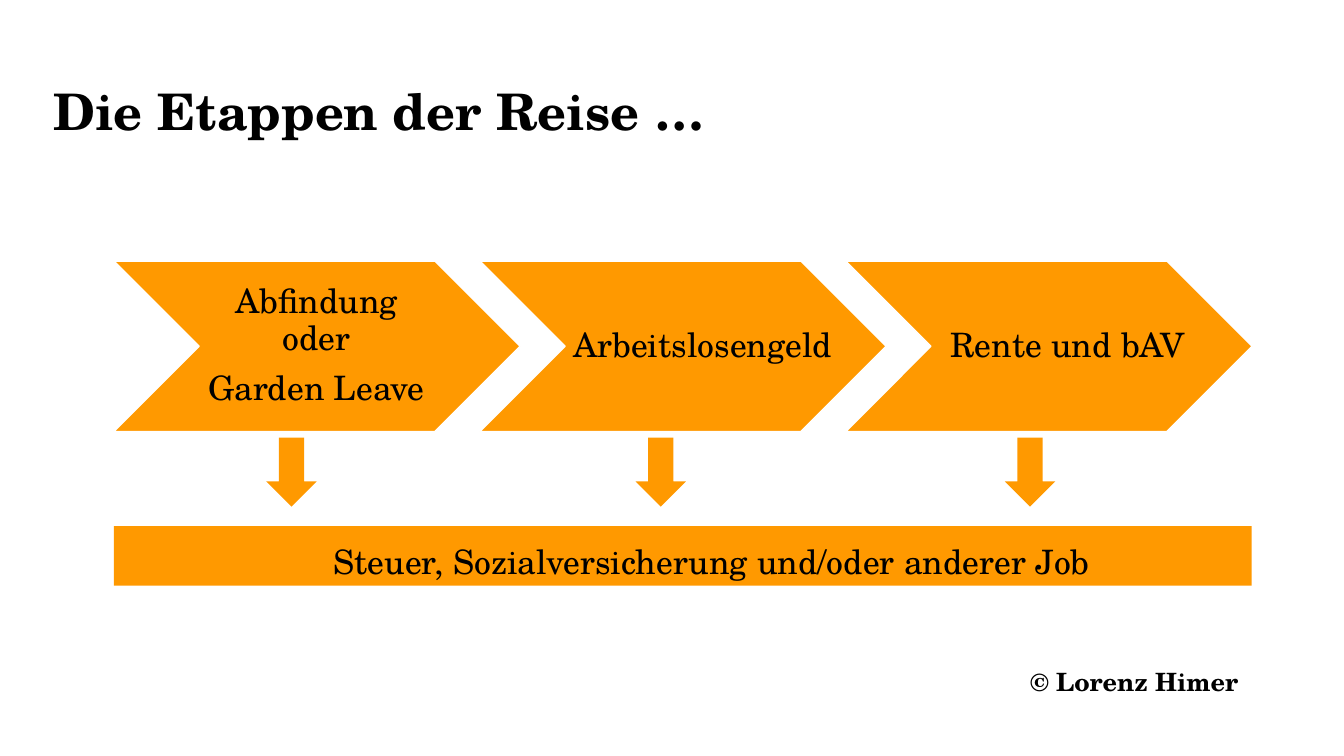
from pptx import Presentation
from pptx.dml.color import RGBColor
from pptx.enum.shapes import MSO_SHAPE
from pptx.enum.text import MSO_ANCHOR, PP_ALIGN
from pptx.util import Pt

ORANGE = RGBColor(0xFF, 0x99, 0x00)
WHITE = RGBColor(0xFF, 0xFF, 0xFF)
BLACK = RGBColor(0x00, 0x00, 0x00)
FONT = "TeX Gyre Schola"
CHEVRON, DOWN_ARROW, RECTANGLE = MSO_SHAPE.CHEVRON, MSO_SHAPE.DOWN_ARROW, MSO_SHAPE.RECTANGLE
LEFT, CENTER = PP_ALIGN.LEFT, PP_ALIGN.CENTER
TOP, MIDDLE = MSO_ANCHOR.TOP, MSO_ANCHOR.MIDDLE

presentation = Presentation()
presentation.slide_width = Pt(960)
presentation.slide_height = Pt(540)
slide = presentation.slides.add_slide(presentation.slide_layouts[6])


def add_text(text, left, top, width, height, size=24, bold=False, align=LEFT,
             anchor=TOP, inset=3.6, line_spacing=None, space_before=None):
    box = slide.shapes.add_textbox(Pt(left), Pt(top), Pt(width), Pt(height))
    frame = box.text_frame
    frame.word_wrap = True
    frame.vertical_anchor = anchor
    frame.margin_left = frame.margin_right = Pt(inset)
    frame.margin_top = frame.margin_bottom = Pt(inset)
    frame.text = text
    for paragraph in frame.paragraphs:
        paragraph.alignment = align
        paragraph.line_spacing = line_spacing
        paragraph.space_before = space_before
        font = paragraph.runs[0].font
        font.name, font.size, font.bold = FONT, Pt(size), bold
        font.color.rgb = BLACK


def add_orange_shape(kind, left, top, width, height):
    shape = slide.shapes.add_shape(kind, Pt(left), Pt(top), Pt(width), Pt(height))
    shape.shadow.inherit = False
    shape.fill.solid()
    shape.fill.fore_color.rgb = ORANGE
    shape.line.fill.background()
    return shape


# Title
add_text("Die Etappen der Reise …", 34.5, 54, 893, 48.2, size=36, bold=True)

# Bar below all stages
add_orange_shape(RECTANGLE, 81.4, 375.8, 812.6, 42.5)
add_text("Steuer, Sozialversicherung und/oder anderer Job", 234.7, 383, 625, 34.6)

# Stages: chevron, label and arrow down to the bar
stages = [
    ("Abfindung oder\nGarden Leave", 139, 174.2, 65.5),
    ("Arbeitslosengeld", 400.3, 203, 31),
    ("Rente und bAV", 671.8, 181.4, 31),
]
CHEVRON_TOP, CHEVRON_HEIGHT = 186.5, 121.7
for index, (label, label_left, label_width, label_height) in enumerate(stages):
    add_orange_shape(DOWN_ARROW, 190.2 + index * 263.8, 312.7, 36, 49.2)
    chevron = add_orange_shape(CHEVRON, 81.4 + index * 261.4, CHEVRON_TOP, 290.2, CHEVRON_HEIGHT)
    chevron.line.color.rgb = WHITE
    chevron.line.width = Pt(1)
    label_top = CHEVRON_TOP + (CHEVRON_HEIGHT - label_height) / 2
    add_text(label, label_left, label_top, label_width, label_height, align=CENTER,
             anchor=MIDDLE, inset=2.2, line_spacing=0.9, space_before=Pt(10))

# Author line
add_text("© Lorenz Himer", 732.2, 472.3, 183, 28, size=18, bold=True)

presentation.save("out.pptx")
